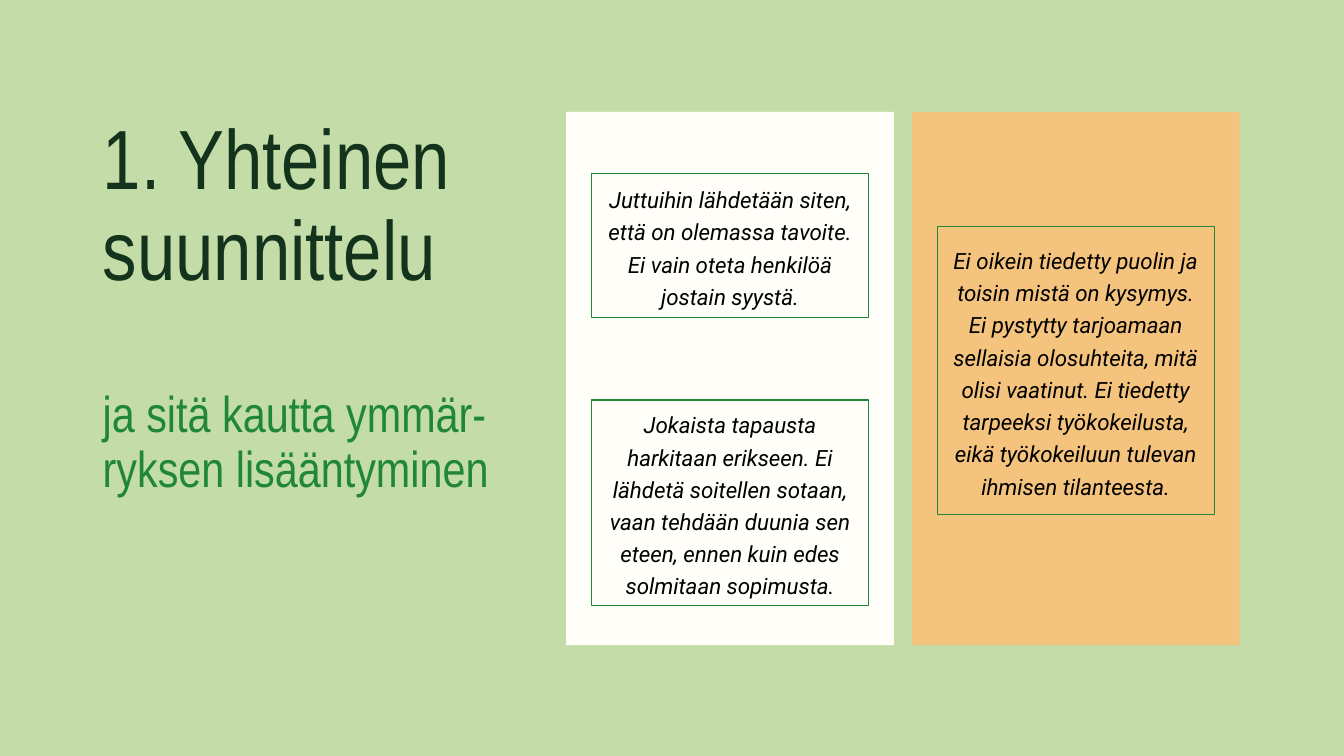
from pptx import Presentation
from pptx.dml.color import RGBColor
from pptx.enum import shapes, text
from pptx.util import Cm, Pt

COLORS = {
    "background": "C4DDA8",
    "cream": "FFFEF9",
    "orange": "F4C37D",
    "heading": "14331C",
    "green": "208736",
    "quote": "000000",
}

PANEL_TOP, PANEL_WIDTH, PANEL_HEIGHT = 2.82, 8.26, 13.44
QUOTE_WIDTH = 6.99

# Each quote: distance from the panel top, height, wording
GOOD_QUOTES = [
    (1.55, 3.63, "Juttuihin lähdetään siten, että on olemassa tavoite. "
                 "Ei vain oteta henkilöä jostain syystä."),
    (7.26, 5.18, "Jokaista tapausta harkitaan erikseen. Ei lähdetä soitellen "
                 "sotaan, vaan tehdään duunia sen eteen, ennen kuin edes "
                 "solmitaan sopimusta."),
]
BAD_QUOTES = [
    (2.9, 7.24, "Ei oikein tiedetty puolin ja toisin mistä on kysymys. "
                "Ei pystytty tarjoamaan sellaisia olosuhteita, mitä olisi "
                "vaatinut. Ei tiedetty tarpeeksi työkokeilusta, eikä "
                "työkokeiluun tulevan ihmisen tilanteesta."),
]


def color(key):
    return RGBColor.from_string(COLORS[key])


def style(paragraph, font_name, size, color_key, line_spacing):
    paragraph.line_spacing = line_spacing
    for run in paragraph.runs:
        run.font.name = font_name
        run.font.size = Pt(size)
        run.font.color.rgb = color(color_key)


def add_rectangle(slide, left, top, width, height):
    rectangle = slide.shapes.add_shape(
        shapes.MSO_SHAPE.RECTANGLE, Cm(left), Cm(top), Cm(width), Cm(height))
    rectangle.shadow.inherit = False
    return rectangle


def add_heading(slide, left, top, width, height):
    box = slide.shapes.add_textbox(Cm(left), Cm(top), Cm(width), Cm(height))
    frame = box.text_frame
    frame.word_wrap = True
    frame.text = "1. Yhteinen suunnittelu"
    style(frame.paragraphs[0], "Arial Narrow", 60, "heading", 0.9)
    subtitle = frame.add_paragraph()
    subtitle.text = "ja sitä kautta ymmär-ryksen lisääntyminen"
    subtitle.space_before = Pt(65)
    style(subtitle, "Arial Narrow", 36, "green", 0.9)


def add_quote(slide, left, top, width, height, wording):
    quote = add_rectangle(slide, left, top, width, height)
    quote.fill.background()
    quote.line.color.rgb = color("green")
    quote.line.width = Pt(0.75)
    frame = quote.text_frame
    frame.word_wrap = True
    frame.vertical_anchor = text.MSO_ANCHOR.MIDDLE
    frame.text = wording
    paragraph = frame.paragraphs[0]
    paragraph.alignment = text.PP_ALIGN.CENTER
    style(paragraph, "Roboto", 16, "quote", 1.2)
    paragraph.runs[0].font.italic = True


def add_panel(slide, left, top, width, height, fill_key, quotes):
    panel = add_rectangle(slide, left, top, width, height)
    panel.fill.solid()
    panel.fill.fore_color.rgb = color(fill_key)
    panel.line.fill.background()
    margin = (width - QUOTE_WIDTH) / 2
    for offset, quote_height, wording in quotes:
        add_quote(slide, left + margin, top + offset, QUOTE_WIDTH,
                  quote_height, wording)


def main():
    deck = Presentation()
    deck.slide_width, deck.slide_height = Cm(33.87), Cm(19.05)
    slide = deck.slides.add_slide(deck.slide_layouts[6])

    # Background
    slide.background.fill.solid()
    slide.background.fill.fore_color.rgb = color("background")

    # Heading on the left
    add_heading(slide, 2.34, PANEL_TOP, 10.77, 13.06)

    # Quote panels on the right
    for left, fill_key, quotes in [(14.27, "cream", GOOD_QUOTES),
                                   (22.98, "orange", BAD_QUOTES)]:
        add_panel(slide, left, PANEL_TOP, PANEL_WIDTH, PANEL_HEIGHT,
                  fill_key, quotes)

    deck.save("out.pptx")


if __name__ == "__main__":
    main()
